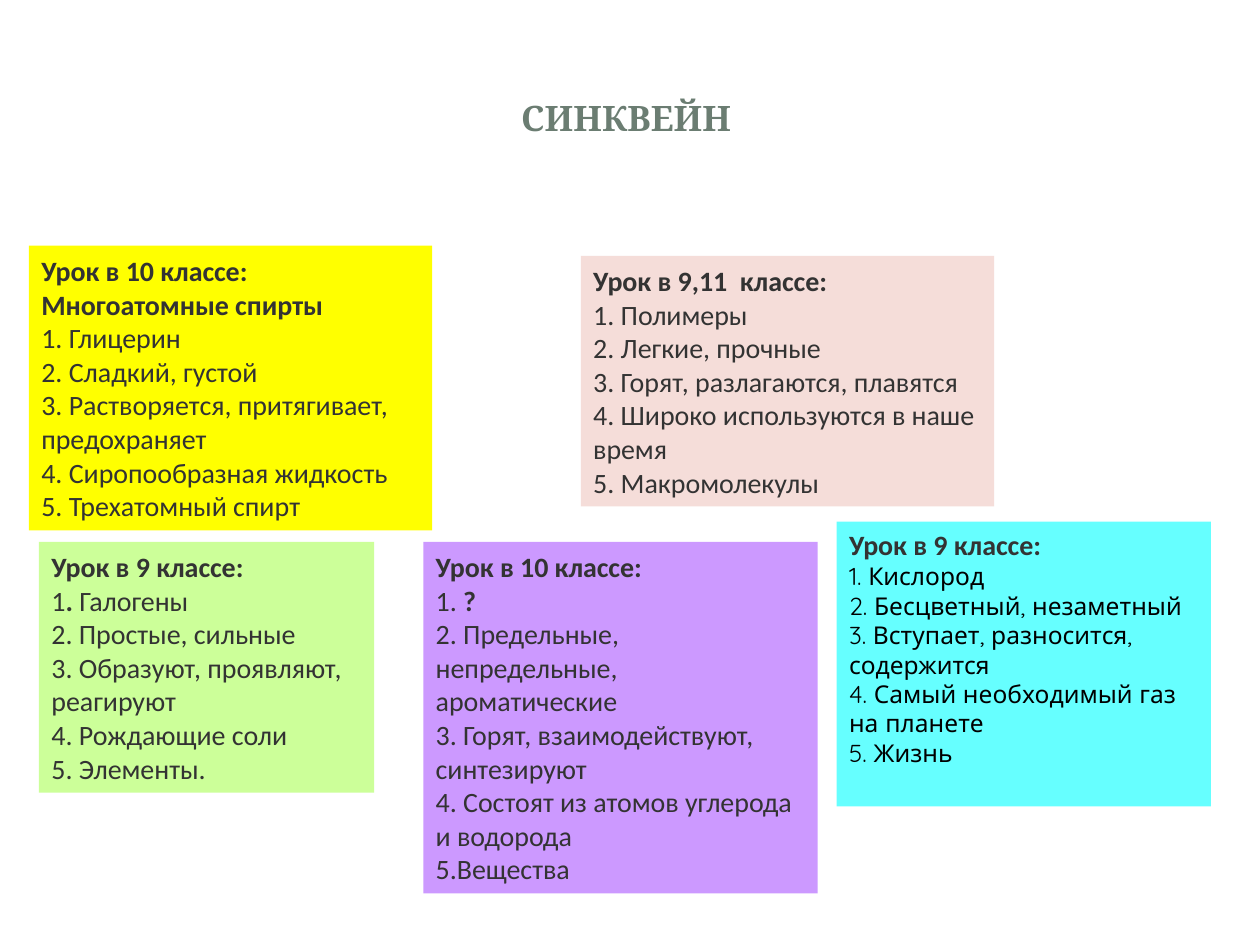
from pptx import Presentation
from pptx.dml.color import RGBColor
from pptx.enum.shapes import MSO_SHAPE
from pptx.enum.text import MSO_ANCHOR, PP_ALIGN
from pptx.util import Inches, Pt

RECT = MSO_SHAPE.RECTANGLE
TOP, MIDDLE = MSO_ANCHOR.TOP, MSO_ANCHOR.MIDDLE
LEFT, CENTER = PP_ALIGN.LEFT, PP_ALIGN.CENTER

SAGE = RGBColor(0x6B, 0x7D, 0x72)
GREY = RGBColor(0x33, 0x33, 0x33)
BLACK = RGBColor(0x00, 0x00, 0x00)
YELLOW = RGBColor(0xFF, 0xFF, 0x00)
PINK = RGBColor(0xF5, 0xDD, 0xD9)
GREEN = RGBColor(0xCC, 0xFF, 0x99)
VIOLET = RGBColor(0xCC, 0x99, 0xFF)
CYAN = RGBColor(0x66, 0xFF, 0xFF)

# Font, size and colour of each kind of text
TITLE = ("Cambria", 20, SAGE)
PLAIN = ("Calibri", 16, GREY)
LIGHT = ("Quicksand", 14, BLACK)

# Place, fill, anchor, verse style, heading, verse; stars enclose bold words
CARDS = [
    ((0.23, 1.95, 3.2, 2.26), YELLOW, MIDDLE, PLAIN,
     "Урок в 10 классе: Многоатомные спирты",
     ["1. Глицерин", "2. Сладкий, густой",
      "3. Растворяется, притягивает, предохраняет",
      "4. Сиропообразная жидкость", "5. Трехатомный спирт"]),
    ((4.61, 2.03, 3.28, 1.99), PINK, MIDDLE, PLAIN,
     "Урок в 9,11  классе:",
     ["1. Полимеры", "2. Легкие, прочные",
      "3. Горят, разлагаются, плавятся",
      "4. Широко используются в наше время", "5. Макромолекулы"]),
    ((0.31, 4.3, 2.66, 1.99), GREEN, MIDDLE, PLAIN,
     "Урок в 9 классе:",
     ["1*. *Галогены", "2. Простые, сильные",
      "3. Образуют, проявляют, реагируют",
      "4. Рождающие соли", "5. Элементы."]),
    ((3.36, 4.3, 3.13, 2.79), VIOLET, MIDDLE, PLAIN,
     "Урок в 10 классе:",
     ["1. *?*", "2. Предельные, непредельные, ароматические",
      "3. Горят, взаимодействуют, синтезируют",
      "4. Состоят из атомов углерода и водорода", "5.Вещества"]),
    ((6.64, 4.14, 2.97, 2.26), CYAN, TOP, LIGHT,
     "Урок в 9 классе:",
     ["1. Кислород", "2. Бесцветный, незаметный",
      "3. Вступает, разносится, содержится",
      "4. Самый необходимый газ на планете", "5. Жизнь"]),
]


def style_run(run, style, bold):
    name, size, color = style
    run.font.name = name
    run.font.size = Pt(size)
    run.font.color.rgb = color
    run.font.bold = bold


def fill_line(para, text, style):
    """Write a line in which stars switch bold on and off."""
    para.alignment = LEFT
    for i, part in enumerate(text.split("*")):
        if part:
            run = para.add_run()
            run.text = part
            style_run(run, style, i % 2 == 1)


def add_title(slide, text):
    box = slide.shapes.add_textbox(
        Inches(0.47), Inches(0.31), Inches(9), Inches(1.25))
    frame = box.text_frame
    frame.word_wrap = True
    frame.vertical_anchor = MIDDLE
    frame.text = text
    para = frame.paragraphs[0]
    para.alignment = CENTER
    style_run(para.runs[0], TITLE, True)


def add_card(slide, place, fill, anchor, style, head, verse):
    card = slide.shapes.add_shape(RECT, *map(Inches, place))
    card.shadow.inherit = False
    card.fill.solid()
    card.fill.fore_color.rgb = fill
    card.line.fill.background()
    frame = card.text_frame
    frame.word_wrap = True
    frame.vertical_anchor = anchor
    fill_line(frame.paragraphs[0], f"*{head}*", PLAIN)
    for text in verse:
        fill_line(frame.add_paragraph(), text, style)


def main():
    deck = Presentation()
    deck.slide_width = Inches(10)
    deck.slide_height = Inches(7.5)
    slide = deck.slides.add_slide(deck.slide_layouts[6])
    add_title(slide, "СИНКВЕЙН")
    for card in CARDS:
        add_card(slide, *card)
    deck.save("out.pptx")


if __name__ == "__main__":
    main()
